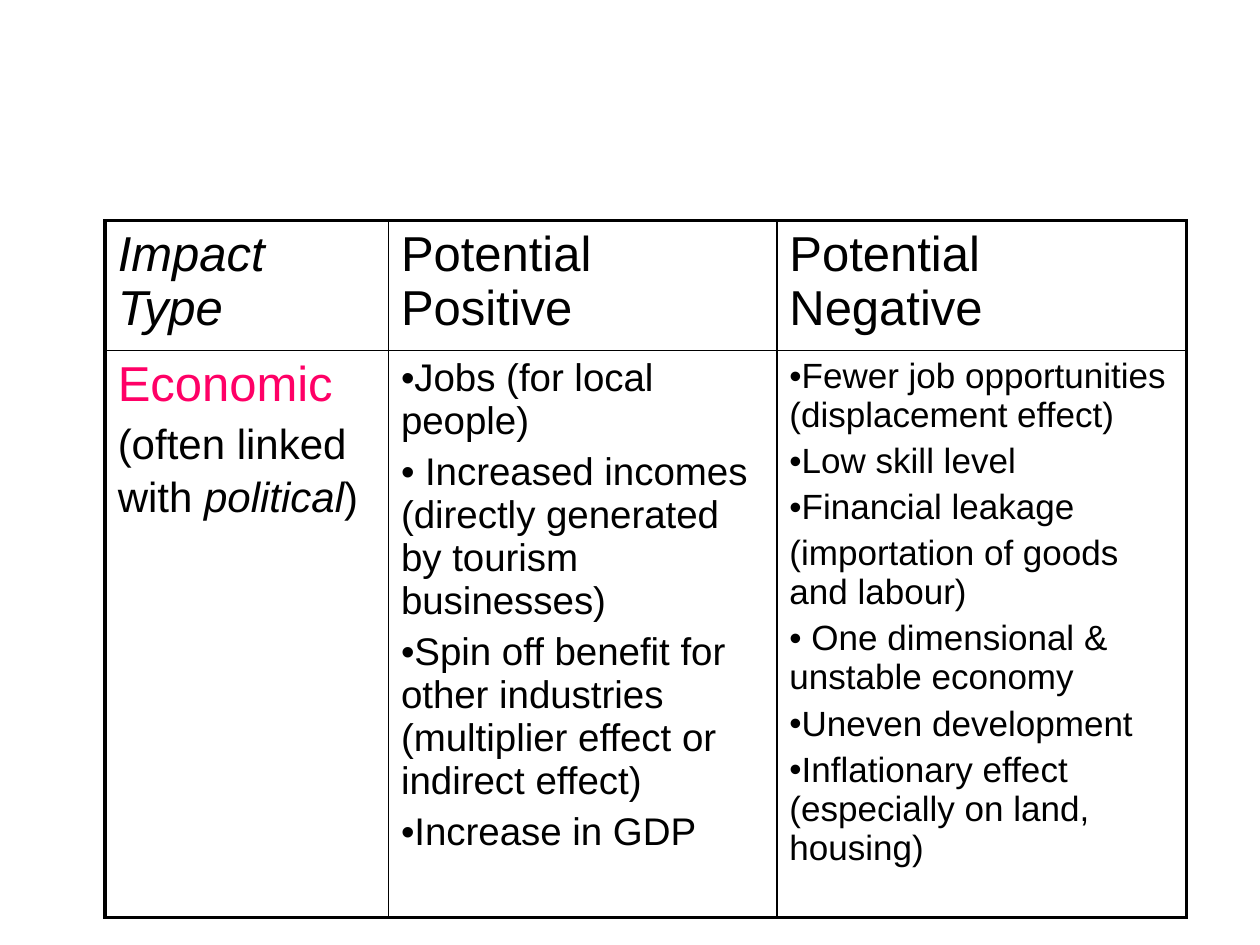
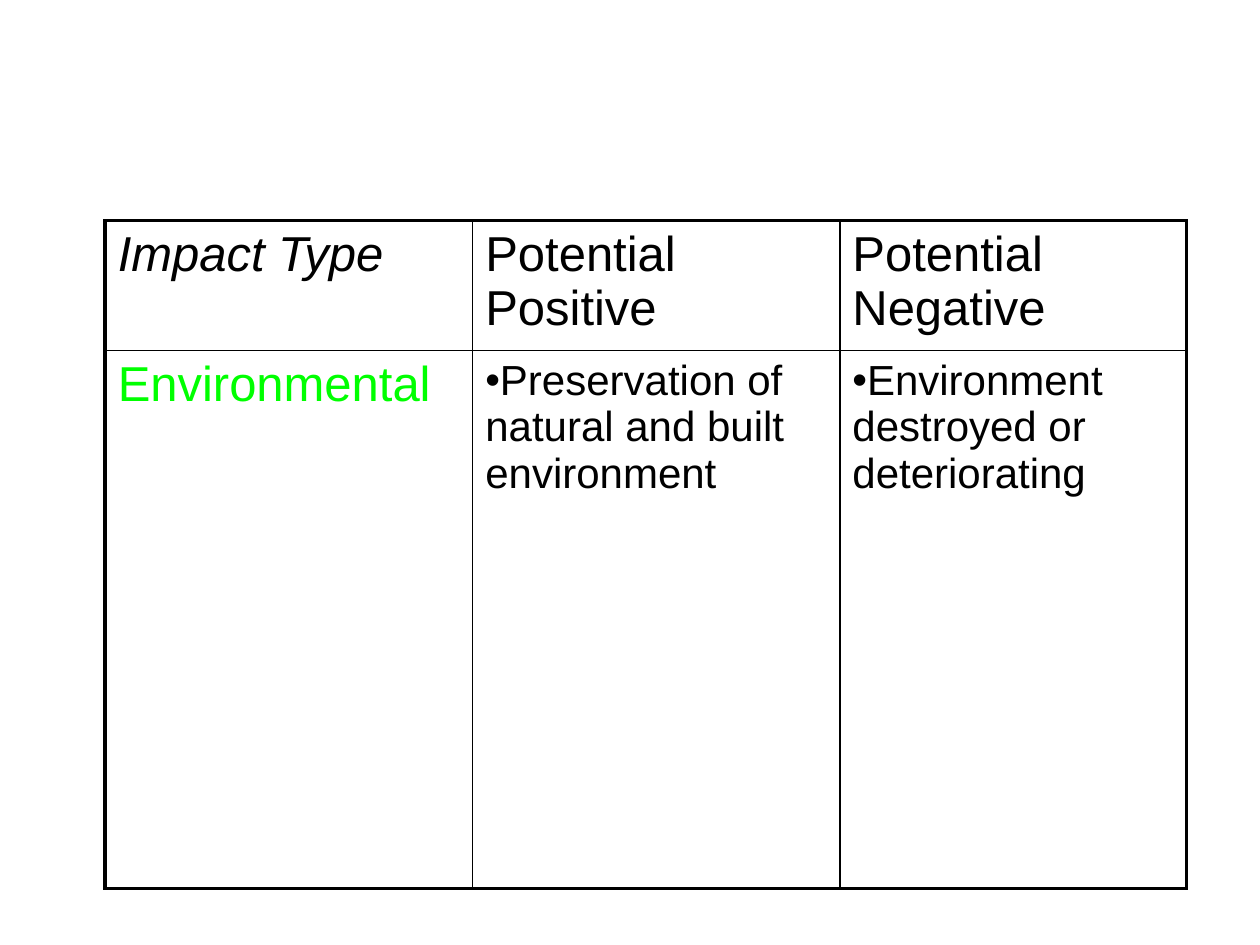
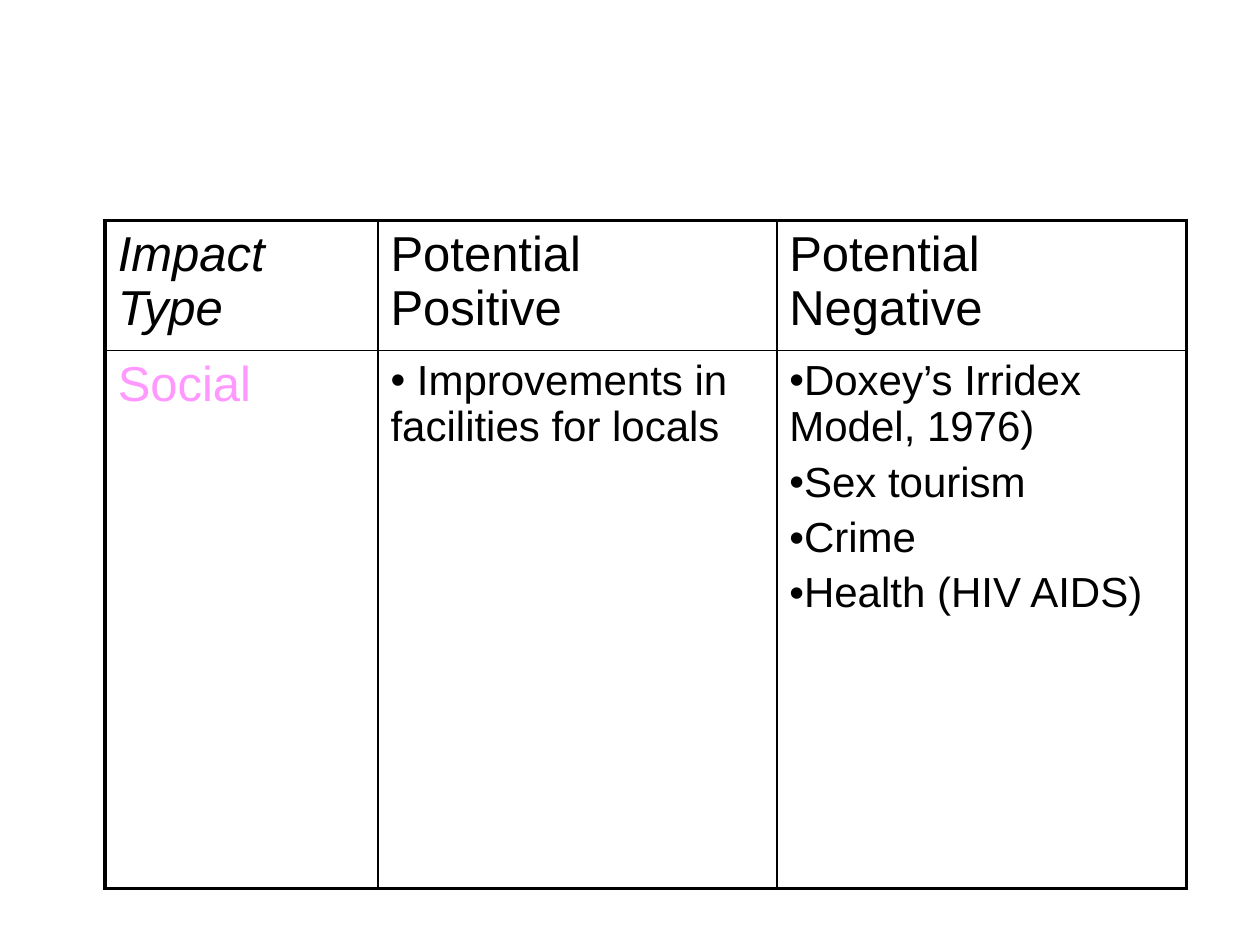
"""Build three slides of tables on the impacts of tourism."""
from dataclasses import dataclass

from lxml import etree
from pptx import Presentation
from pptx import util as u
from pptx.dml.color import RGBColor
from pptx.oxml import ns


@dataclass(frozen=True)
class Theme:
    font: str = "Arial"
    ink: str = "000000"
    economic: str = "FF0066"
    environmental: str = "00FF00"
    social: str = "FF99FF"
    heading: int = 28
    body: int = 24
    compact: int = 22
    dense: int = 20
    space_before_percent: int = 20
    outer_line: float = 2.25
    inner_line: float = 1


@dataclass(frozen=True)
class Line:
    content: str
    size: int = Theme.body
    color: str = Theme.ink
    italic: bool = False
    bullet: bool = False


THEME = Theme()
TABLE_LEFT, TABLE_TOP, TABLE_WIDTH = 2.12, 4.45, 21.8
HEADER_HEIGHT = 2.62
HEADER = (
    [Line("Impact Type", THEME.heading, italic=True)],
    [Line("Potential Positive", THEME.heading)],
    [Line("Potential Negative", THEME.heading)],
)


def bullets(*items, size=THEME.body):
    """Return one bulleted line for each item."""
    return [Line(item, size, bullet=True) for item in items]


def label(name, color):
    """Return the coloured name of an impact type."""
    return Line(name, THEME.heading, color)


def add_space_before(paragraph):
    """Set the space before as a share of the line height."""
    spacing = etree.SubElement(paragraph._p.get_or_add_pPr(), ns.qn("a:spcBef"))
    etree.SubElement(
        spacing, ns.qn("a:spcPct"), val=str(THEME.space_before_percent * 1000))


def add_bullet(paragraph):
    """Give the paragraph a bullet without any indent."""
    properties = paragraph._p.get_or_add_pPr()
    properties.set("marL", "0")
    properties.set("indent", "0")
    etree.SubElement(properties, ns.qn("a:buFont"), typeface=THEME.font)
    etree.SubElement(properties, ns.qn("a:buChar"), char="•")


def write_line(paragraph, line, is_first):
    """Write one line of text with its bullet, spacing and font."""
    paragraph.add_run().text = line.content
    if not is_first:
        add_space_before(paragraph)
    if line.bullet:
        add_bullet(paragraph)
    font = paragraph.font
    font.name = THEME.font
    font.size = u.Pt(line.size)
    font.italic = line.italic
    font.color.rgb = RGBColor.from_string(line.color)


def add_border(cell, side, width):
    """Draw one side of a cell: L, R, T or B."""
    line = etree.SubElement(
        cell._tc.get_or_add_tcPr(), ns.qn(f"a:ln{side}"), w=str(u.Pt(width)))
    fill = etree.SubElement(line, ns.qn("a:solidFill"))
    etree.SubElement(fill, ns.qn("a:srgbClr"), val=THEME.ink)


def format_cell(cell, row, column, row_count, column_count):
    """Give the cell thick outer borders, thin inner borders and no fill."""
    outer_sides = {
        "L": column == 0,
        "R": column == column_count - 1,
        "T": row == 0,
        "B": row == row_count - 1,
    }
    for side, is_outer in outer_sides.items():
        add_border(cell, side, THEME.outer_line if is_outer else THEME.inner_line)
    cell.fill.background()


def fill_cell(cell, lines):
    """Write the lines into the cell, one paragraph each."""
    frame = cell.text_frame
    for index, line in enumerate(lines):
        paragraph = frame.add_paragraph() if index else frame.paragraphs[0]
        write_line(paragraph, line, index == 0)


def add_impact_slide(presentation, first_widths, body_height, body):
    """Add a slide with one impact table and return the table."""
    slide = presentation.slides.add_slide(presentation.slide_layouts[6])
    rows = (HEADER, body)
    heights = (HEADER_HEIGHT, body_height)
    widths = (*first_widths, TABLE_WIDTH - sum(first_widths))
    table = slide.shapes.add_table(
        len(rows), len(widths), u.Cm(TABLE_LEFT), u.Cm(TABLE_TOP),
        u.Cm(TABLE_WIDTH), u.Cm(sum(heights))).table
    table.first_row = table.horz_banding = False
    for column, width in zip(table.columns, widths):
        column.width = u.Cm(width)
    for row, height in zip(table.rows, heights):
        row.height = u.Cm(height)
    for row_index, row in enumerate(rows):
        for column_index, lines in enumerate(row):
            cell = table.cell(row_index, column_index)
            format_cell(cell, row_index, column_index, len(rows), len(widths))
            fill_cell(cell, lines)
    return table


def add_political_link(cell):
    """Finish the note on politics with its italic word."""
    paragraph = cell.text_frame.paragraphs[-1]
    for content, italic in (("political", True), (")", False), (" ", False)):
        run = paragraph.add_run()
        run.text = content
        run.font.italic = italic
    run.font.size = u.Pt(THEME.heading)


def main():
    """Build and save the presentation."""
    presentation = Presentation()
    presentation.slide_width = u.Cm(25.4)
    presentation.slide_height = u.Cm(19.05)

    economic_table = add_impact_slide(presentation, (5.71, 7.83), 11.43, (
        [label("Economic", THEME.economic), Line("(often linked with ")],
        bullets(
            "Jobs (for local people)",
            " Increased incomes (directly generated by tourism businesses)",
            "Spin off benefit for other industries "
            "(multiplier effect or indirect effect)",
            "Increase in GDP",
            size=THEME.compact),
        [
            *bullets(
                "Fewer job opportunities (displacement effect)",
                "Low skill level",
                "Financial leakage",
                size=THEME.dense),
            Line("(importation of goods and labour)", THEME.dense),
            *bullets(
                " One dimensional & unstable economy",
                "Uneven development",
                "Inflationary effect (especially on land, housing)",
                size=THEME.dense),
        ],
    ))
    add_political_link(economic_table.cell(1, 0))

    add_impact_slide(presentation, (7.41, 7.4), 10.84, (
        [label("Environmental", THEME.environmental)],
        bullets("Preservation of natural and built environment"),
        bullets("Environment destroyed or deteriorating"),
    ))

    add_impact_slide(presentation, (5.5, 8.04), 10.84, (
        [label("Social", THEME.social)],
        bullets(" Improvements in facilities for locals"),
        bullets("Doxey’s Irridex Model, 1976)", "Sex tourism", "Crime",
                "Health (HIV AIDS)"),
    ))

    presentation.save("out.pptx")


if __name__ == "__main__":
    main()
